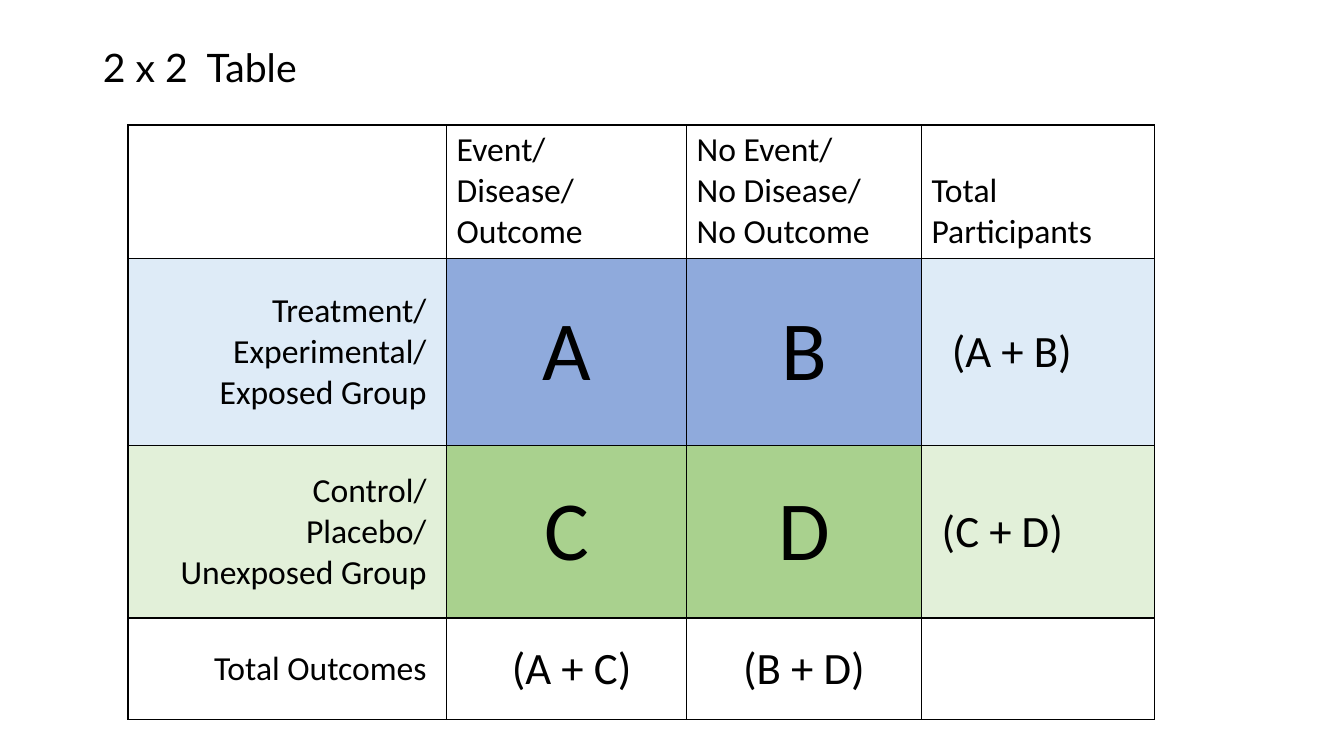
from lxml.etree import SubElement
from pptx import Presentation
from pptx.dml.color import RGBColor
from pptx.enum.text import MSO_ANCHOR, PP_ALIGN
from pptx.oxml.ns import qn
from pptx.util import Pt

PX = 9144
BLACK = RGBColor(0x00, 0x00, 0x00)
PALE_BLUE = RGBColor(0xDE, 0xEB, 0xF7)
BLUE = RGBColor(0x8F, 0xAA, 0xDC)
PALE_GREEN = RGBColor(0xE2, 0xF0, 0xD9)
GREEN = RGBColor(0xA9, 0xD1, 0x8E)

COL_WIDTHS = [316, 238, 233, 231]
ROW_HEIGHTS = [132, 186, 171, 101]

LEFT, CENTER, RIGHT = PP_ALIGN.LEFT, PP_ALIGN.CENTER, PP_ALIGN.RIGHT
HEADER = (24, LEFT, 10, 10)
GROUP = (24, RIGHT, 20, 20)
LETTER = (60, CENTER, 10, 10)
ROWS = [
    [("", None, HEADER),
     ("Event/\nDisease/\nOutcome", None, HEADER),
     ("No Event/\nNo Disease/\nNo Outcome", None, HEADER),
     ("Total Participants", None, HEADER)],
    [("Treatment/\nExperimental/\nExposed Group", PALE_BLUE, GROUP),
     ("A", BLUE, LETTER),
     ("B", BLUE, LETTER),
     ("(A + B)", PALE_BLUE, (32, LEFT, 30, 10))],
    [("Control/\nPlacebo/\nUnexposed Group", PALE_GREEN, GROUP),
     ("C", GREEN, LETTER),
     ("D", GREEN, LETTER),
     ("(C + D)", PALE_GREEN, (32, LEFT, 20, 10))],
    [("Total Outcomes", None, GROUP),
     ("(A + C)", None, (32, CENTER, 20, 10)),
     ("(B + D)", None, (32, CENTER, 10, 10)),
     ("", None, HEADER)],
]


def add_text(p, text, font, size):
    for i, line in enumerate(text.split("\n")):
        if i:
            p.add_line_break()
        r = p.add_run()
        r.text = line
        r.font.name = font
        r.font.size = Pt(size)
        r.font.bold = False
        r.font.color.rgb = BLACK


def add_borders(cell):
    tcPr = cell._tc.get_or_add_tcPr()
    for side in ("lnL", "lnR", "lnT", "lnB"):
        ln = SubElement(tcPr, qn(f"a:{side}"), w=str(Pt(1)))
        fill = SubElement(ln, qn("a:solidFill"))
        SubElement(fill, qn("a:srgbClr"), val=str(BLACK))


def fill_cell(cell, text, color, style):
    size, align, left, right = style
    add_borders(cell)
    if color is None:
        cell.fill.background()
    else:
        cell.fill.solid()
        cell.fill.fore_color.rgb = color
    cell.margin_left, cell.margin_right = left * PX, right * PX
    cell.margin_top = cell.margin_bottom = 5 * PX
    cell.vertical_anchor = MSO_ANCHOR.BOTTOM if style == HEADER else MSO_ANCHOR.MIDDLE
    p = cell.text_frame.paragraphs[0]
    p.alignment = align
    if text:
        add_text(p, text, "Calibri", size)


def place_title(s, x, y, w, h):
    sp = s.shapes.title
    sp.left, sp.top, sp.width, sp.height = (v * PX for v in (x, y, w, h))
    tf = sp.text_frame
    tf.word_wrap = True
    tf.vertical_anchor = MSO_ANCHOR.TOP
    p = tf.paragraphs[0]
    p.alignment = LEFT
    p.line_spacing = 1.0
    add_text(p, "2 x 2  Table", "Lato", 28)


def add_outcome_table(s, x, y):
    w, h = sum(COL_WIDTHS), sum(ROW_HEIGHTS)
    table = s.shapes.add_table(len(ROWS), len(COL_WIDTHS),
                               x * PX, y * PX, w * PX, h * PX).table
    table.first_row = False
    table.horz_banding = False
    for col, width in zip(table.columns, COL_WIDTHS):
        col.width = width * PX
    for i, (row, height) in enumerate(zip(table.rows, ROW_HEIGHTS)):
        row.height = height * PX
        for cell, (text, color, style) in zip(row.cells, ROWS[i]):
            fill_cell(cell, text, color, style)


def main():
    prs = Presentation()
    prs.slide_width, prs.slide_height = 1333 * PX, 750 * PX
    s = prs.slides.add_slide(prs.slide_layouts[5])
    place_title(s, 92, 38, 591, 57)
    add_outcome_table(s, 127, 124)
    prs.save("out.pptx")


if __name__ == "__main__":
    main()
